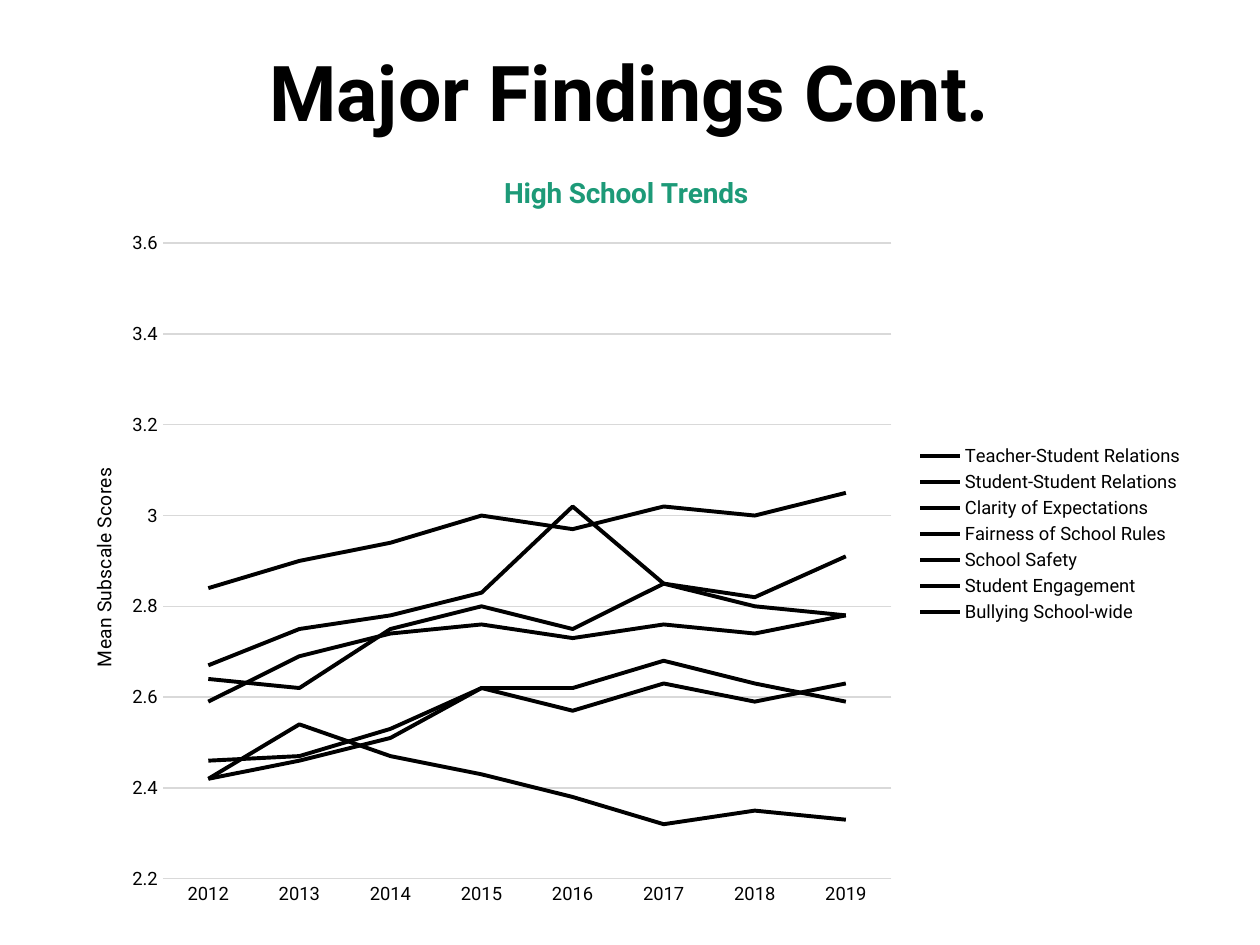
from typing import NamedTuple

from lxml import etree
from pptx import Presentation
from pptx.chart.data import CategoryChartData
from pptx.dml.color import RGBColor
from pptx.enum.chart import XL_CHART_TYPE, XL_LEGEND_POSITION, XL_TICK_MARK
from pptx.enum.text import MSO_ANCHOR, PP_ALIGN
from pptx.oxml.ns import qn
from pptx.util import Inches, Pt

LINE_CHART = XL_CHART_TYPE.LINE
LEGEND_RIGHT = XL_LEGEND_POSITION.RIGHT
NO_TICKS = XL_TICK_MARK.NONE
MIDDLE = MSO_ANCHOR.MIDDLE
CENTER = PP_ALIGN.CENTER

TITLE_ONLY_LAYOUT = 5
FONT = "Roboto"
BLACK, GREEN, GRAY = "000000", "1D9A78", "D9D9D9"


class Subscale(NamedTuple):
    name: str
    scores: tuple[float, ...]


YEARS = [str(year) for year in range(2012, 2020)]
SUBSCALES = [
    Subscale("Teacher-Student Relations", (2.67, 2.75, 2.78, 2.83, 3.02, 2.85, 2.82, 2.91)),
    Subscale("Student-Student Relations", (2.46, 2.47, 2.53, 2.62, 2.57, 2.63, 2.59, 2.63)),
    Subscale("Clarity of Expectations", (2.84, 2.9, 2.94, 3, 2.97, 3.02, 3, 3.05)),
    Subscale("Fairness of School Rules", (2.59, 2.69, 2.74, 2.76, 2.73, 2.76, 2.74, 2.78)),
    Subscale("School Safety", (2.64, 2.62, 2.75, 2.8, 2.75, 2.85, 2.8, 2.78)),
    Subscale("Student Engagement", (2.42, 2.46, 2.51, 2.62, 2.62, 2.68, 2.63, 2.59)),
    Subscale("Bullying School-wide", (2.42, 2.54, 2.47, 2.43, 2.38, 2.32, 2.35, 2.33)),
]


def color(value: str) -> RGBColor:
    return RGBColor.from_string(value)


def set_attributes(target, values: dict) -> None:
    for name, value in values.items():
        setattr(target, name, value)


def format_font(font, size: float, fill: str = BLACK, bold: bool = False) -> None:
    set_attributes(font, {"name": FONT, "size": Pt(size), "bold": bold})
    font.color.rgb = color(fill)


def format_line(line, width: float, fill: str) -> None:
    line.color.rgb = color(fill)
    line.width = Pt(width)


def write_heading(heading, text: str, size: float, fill: str, bold: bool) -> None:
    """Write the title of the chart or of an axis."""
    heading.text_frame.text = text
    format_font(heading.text_frame.paragraphs[0].runs[0].font, size, fill, bold)


def place(parent, **fractions: float) -> None:
    """Place a chart part by fractions of the chart's size."""
    layout = parent.find(qn("c:layout"))
    if layout is None:
        layout = etree.Element(qn("c:layout"))
        text = parent.find(qn("c:tx"))
        parent.insert(0 if text is None else parent.index(text) + 1, layout)
    manual = etree.SubElement(layout, qn("c:manualLayout"))
    settings = {"xMode": "edge", "yMode": "edge", **fractions}
    if "w" in fractions:
        settings = {"layoutTarget": "inner", **settings}
    for tag, value in settings.items():
        etree.SubElement(manual, qn(f"c:{tag}")).set("val", str(value))


def add_title(slide, text: str) -> None:
    title = slide.shapes.title
    set_attributes(title, {"left": Inches(0.69), "top": Inches(0.04),
                           "width": Inches(8.62), "height": Inches(1.45)})
    title.text_frame.text = text
    set_attributes(title.text_frame, {"vertical_anchor": MIDDLE, "word_wrap": True})
    paragraph = title.text_frame.paragraphs[0]
    set_attributes(paragraph, {"alignment": CENTER, "line_spacing": 0.9})
    format_font(paragraph.runs[0].font, 44, bold=True)


def add_trend_chart(slide, subscales: list[Subscale]) -> None:
    data = CategoryChartData()
    data.categories = YEARS
    for subscale in subscales:
        data.add_series(subscale.name, subscale.scores)
    chart = slide.shapes.add_chart(LINE_CHART, Inches(0.42), Inches(1.17),
                                   Inches(9.08), Inches(6.13), data).chart
    format_font(chart.font, 10.5)

    # Headings
    write_heading(chart.chart_title, "High School Trends", 16, GREEN, True)
    place(chart.chart_title.element, x=0.39, y=0.03)
    score_axis, year_axis = chart.value_axis, chart.category_axis
    write_heading(score_axis.axis_title, "Mean Subscale Scores", 11, BLACK, False)
    score_title = score_axis.axis_title.element
    score_title.find(".//" + qn("a:bodyPr")).set("rot", "-5400000")
    place(score_title, x=0.03, y=0.41)

    # Axes
    for axis in (score_axis, year_axis):
        set_attributes(axis, {"major_tick_mark": NO_TICKS, "minor_tick_mark": NO_TICKS})
        format_font(axis.tick_labels.font, 10.5)
    set_attributes(score_axis, {"minimum_scale": 2.2, "maximum_scale": 3.6,
                                "major_unit": 0.2})
    set_attributes(score_axis.tick_labels, {"number_format": "General",
                                            "number_format_is_linked": False})
    score_axis.format.line.fill.background()
    format_line(score_axis.major_gridlines.format.line, 0.75, GRAY)
    format_line(year_axis.format.line, 0.75, GRAY)

    # Legend and plot area
    chart.has_legend = True
    set_attributes(chart.legend, {"position": LEGEND_RIGHT, "include_in_layout": False})
    format_font(chart.legend.font, 10.5)
    place(chart.element.find(".//" + qn("c:plotArea")), x=0.096, y=0.124, w=0.637, h=0.823)

    # Trend lines
    plot = chart.plots[0]
    plot.vary_by_categories = False
    for series in plot.series:
        series.smooth = False
        format_line(series.format.line, 2.25, BLACK)


def main() -> None:
    presentation = Presentation()
    set_attributes(presentation, {"slide_width": Inches(10), "slide_height": Inches(7.5)})
    slide = presentation.slides.add_slide(presentation.slide_layouts[TITLE_ONLY_LAYOUT])
    add_title(slide, "Major Findings Cont.")
    add_trend_chart(slide, SUBSCALES)
    presentation.save("out.pptx")


if __name__ == "__main__":
    main()
